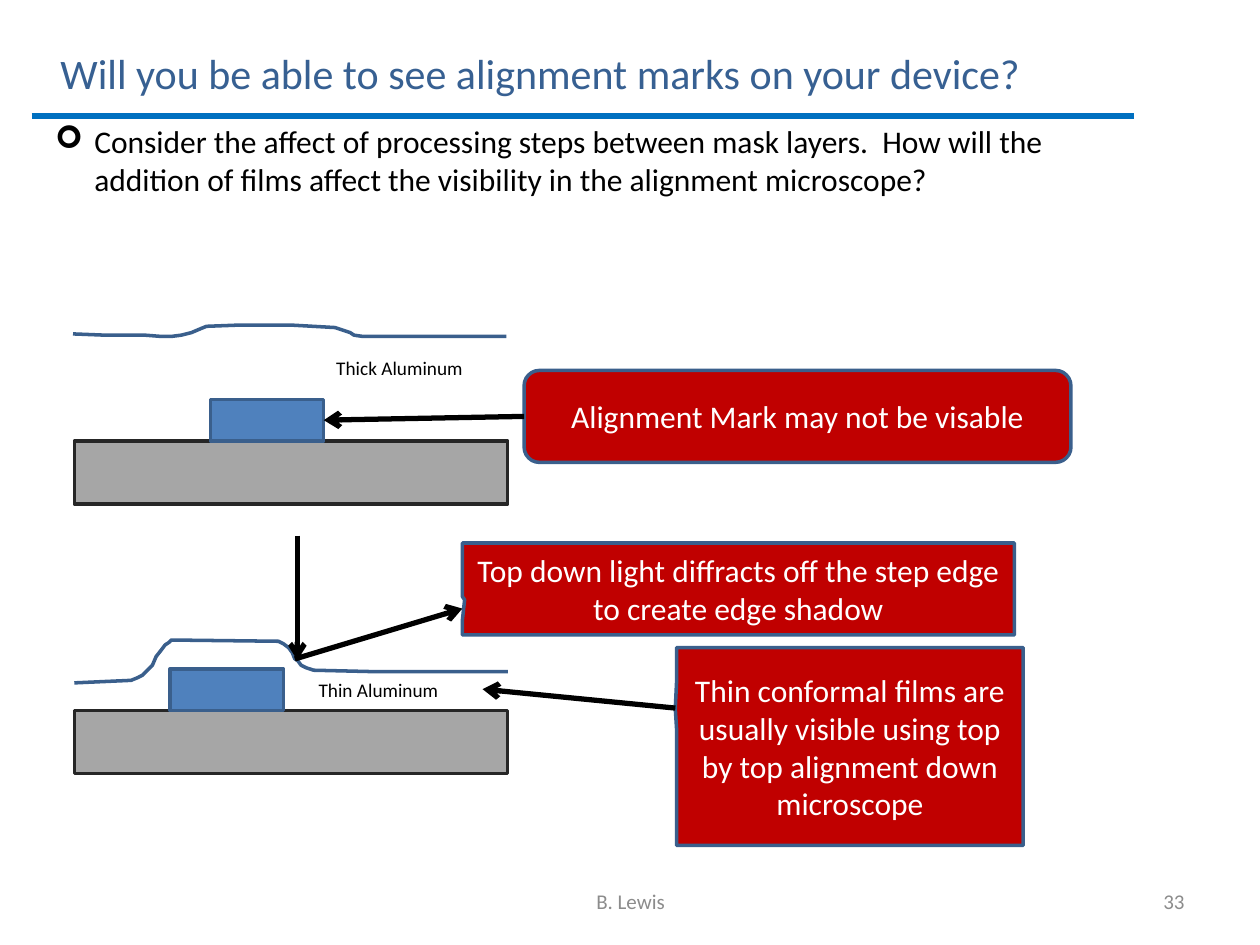
"""Build a slide on the visibility of alignment marks beneath deposited films."""
from dataclasses import dataclass

from lxml.etree import SubElement
from pptx import Presentation
from pptx.dml.color import RGBColor as RGB
from pptx.enum.shapes import MSO_CONNECTOR as Connector, MSO_SHAPE as Shape
from pptx.enum.text import MSO_ANCHOR as Anchor, MSO_AUTO_SIZE as AutoSize, PP_ALIGN as Align
from pptx.oxml.ns import qn
from pptx.util import Pt

EMU_PER_PX = 9144
TITLE_ONLY = 5


@dataclass(frozen=True)
class Theme:
    """Colours and type sizes of the slide."""
    font: str = "Calibri"
    title: str = "376092"
    rule: str = "0070C0"
    text: str = "000000"
    muted: str = "8C8C8C"
    light: str = "FFFFFF"
    warning: str = "C00000"
    mark: str = "4F81BD"
    outline: str = "3A5F8C"
    substrate: str = "A6A6A6"
    substrate_edge: str = "262626"
    title_size: int = 24
    body_size: int = 18
    footer_size: int = 12
    label_size: int = 11
    thin_line: int = 2
    thick_line: int = 3


def px(*lengths):
    """Turn px lengths into EMU."""
    return [length * EMU_PER_PX for length in lengths]


def write(shape, text, *, size, color, font, align=Align.LEFT, anchor=Anchor.TOP, bullet=None):
    """Write one formatted paragraph into a shape."""
    frame = shape.text_frame
    frame.word_wrap = True
    frame.auto_size = AutoSize.NONE
    frame.vertical_anchor = anchor
    frame.text = text
    paragraph = frame.paragraphs[0]
    paragraph.alignment = align
    if bullet:
        properties = paragraph._p.get_or_add_pPr()
        indent, = px(31)
        properties.set("marL", str(indent))
        properties.set("indent", str(-indent))
        SubElement(properties, qn("a:buFont"), typeface="Wingdings")
        SubElement(properties, qn("a:buChar"), char=bullet)
    run_font = paragraph.runs[0].font
    run_font.name, run_font.size = font, Pt(size)
    run_font.color.rgb = RGB.from_string(color)


class SlideBuilder:
    """Holds the theme and the current slide."""

    def __init__(self, slide, theme):
        """Keep the slide and its theme."""
        self.slide, self.theme = slide, theme

    def title(self, text, box):
        """Move and fill the title placeholder."""
        shape = self.slide.shapes.title
        shape.left, shape.top, shape.width, shape.height = px(*box)
        write(shape, text, size=self.theme.title_size, color=self.theme.title, font=self.theme.font)

    def text(self, text, box, size, color=None, **text_format):
        """Add a text box."""
        shape = self.slide.shapes.add_textbox(*px(*box))
        write(shape, text, size=size, color=color or self.theme.text,
              font=self.theme.font, **text_format)

    def outline(self, shape, color):
        """Give a shape its thin outline and no shadow."""
        shape.shadow.inherit = False
        shape.line.color.rgb = RGB.from_string(color)
        shape.line.width = Pt(self.theme.thin_line)

    def block(self, box, fill, edge=None, kind=Shape.RECTANGLE):
        """Add a filled and outlined shape."""
        shape = self.slide.shapes.add_shape(kind, *px(*box))
        shape.fill.solid()
        shape.fill.fore_color.rgb = RGB.from_string(fill)
        self.outline(shape, edge or self.theme.outline)
        return shape

    def callout(self, text, box, kind=Shape.RECTANGULAR_CALLOUT, tip=()):
        """Add a red callout with centred text."""
        shape = self.block(box, self.theme.warning, kind=kind)
        for index, value in enumerate(tip):
            shape.adjustments[index] = value
        write(shape, text, size=self.theme.body_size, color=self.theme.light,
              font=self.theme.font, align=Align.CENTER, anchor=Anchor.MIDDLE)
        return shape

    def line(self, start, end, color=None, arrow=True):
        """Add a straight line, by default with an arrowhead at its end."""
        connector = self.slide.shapes.add_connector(Connector.STRAIGHT, *px(*start, *end))
        connector.line.color.rgb = RGB.from_string(color or self.theme.text)
        connector.line.width = Pt(self.theme.thick_line)
        properties = connector._element.spPr
        if arrow:
            SubElement(properties.find(qn("a:ln")), qn("a:tailEnd"), type="arrow")
        SubElement(properties, qn("a:effectLst"))
        return connector

    def film(self, points):
        """Draw the surface profile of a film."""
        builder = self.slide.shapes.build_freeform(*points[0], scale=EMU_PER_PX)
        builder.add_line_segments(points[1:], close=False)
        shape = builder.convert_to_shape()
        shape.fill.background()
        self.outline(shape, self.theme.outline)

    def wafer(self, top, mark_left, label, label_box):
        """Add a substrate, the mark standing on it and the film's label."""
        self.block((59, top, 344, 50), self.theme.substrate, self.theme.substrate_edge)
        mark = self.block((mark_left, top - 33, 90, 33), self.theme.mark)
        self.text(label, label_box, self.theme.label_size)
        return mark


THIN_FILM = [
    (59, 542), (104, 540), (109, 538), (113, 536), (116, 533), (121, 528), (124, 521),
    (128, 516), (131, 512), (134, 510), (136, 508), (221, 509), (225, 511), (229, 514),
    (232, 518), (234, 523), (236, 524), (239, 528), (243, 530), (249, 532), (293, 533), (403, 533),
]
THICK_FILM = [
    (58, 265), (83, 266), (115, 266), (128, 267), (136, 267), (144, 266), (152, 264),
    (159, 261), (164, 259), (190, 258), (231, 258), (266, 260), (275, 263), (278, 264),
    (281, 266), (288, 267), (297, 267), (402, 267),
]


def main():
    """Compose and save the slide."""
    presentation = Presentation()
    presentation.slide_width, presentation.slide_height = px(1000, 750)
    slide = presentation.slides.add_slide(presentation.slide_layouts[TITLE_ONLY])
    theme = Theme()
    page = SlideBuilder(slide, theme)

    page.title("Will you be able to see alignment marks on your device?", (38, 33, 833, 50))
    page.line((25, 92), (900, 92), theme.rule, arrow=False)
    page.text("Consider the affect of processing steps between mask layers.  How will the "
              "addition of films affect the visibility in the alignment microscope?",
              (34, 92, 850, 101), theme.body_size, bullet="➢")

    page.wafer(564, 135, "Thin Aluminum", (243, 533, 160, 29))
    page.film(THIN_FILM)
    page.callout("Top down light diffracts off the step edge to create edge shadow",
                 (367, 431, 438, 73), tip=(-0.496, 0.118))
    page.callout("Thin conformal films are usually visible using top by top alignment down microscope",
                 (537, 514, 275, 157), tip=(-0.504, -0.192))

    hidden_mark = page.wafer(350, 167, "Thick Aluminum", (257, 278, 184, 29))
    warning = page.callout("Alignment Mark may not be visable", (416, 294, 434, 73),
                           kind=Shape.ROUNDED_RECTANGLE)
    pointer = page.line((416, 330), (257, 333))
    pointer.begin_connect(warning, 1)
    pointer.end_connect(hidden_mark, 3)
    for start, end in (((236, 425), (236, 524)), ((234, 523), (367, 483)), ((536, 562), (383, 547))):
        page.line(start, end)
    page.film(THICK_FILM)

    for text, box, align in (("B. Lewis", (342, 695, 317, 40), Align.CENTER),
                             ("33", (717, 695, 233, 40), Align.RIGHT)):
        page.text(text, box, theme.footer_size, theme.muted, align=align, anchor=Anchor.MIDDLE)

    presentation.save("out.pptx")


if __name__ == "__main__":
    main()
